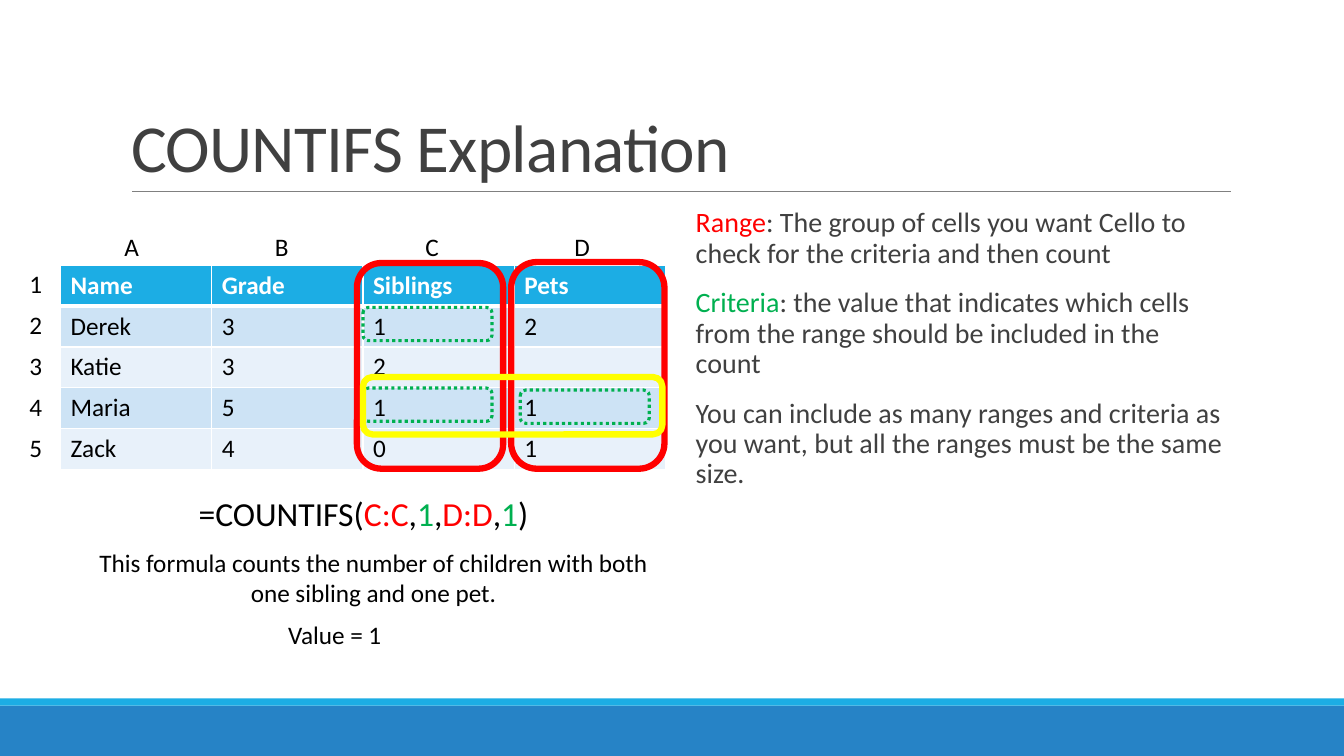
from lxml.etree import SubElement
from pptx import Presentation
from pptx.dml.color import RGBColor
from pptx.enum.dml import MSO_LINE
from pptx.enum.shapes import MSO_CONNECTOR, MSO_SHAPE as SHAPE
from pptx.enum.text import MSO_ANCHOR as ANCHOR, MSO_AUTO_SIZE as AUTO, PP_ALIGN as ALIGN
from pptx.oxml.ns import qn
from pptx.util import Pt

PX = 9144  # 100 px to the inch
FONT = "Calibri"
BLACK = RGBColor(0x00, 0x00, 0x00)
WHITE = RGBColor(0xFF, 0xFF, 0xFF)
DARK = RGBColor(0x40, 0x40, 0x40)
GREY = RGBColor(0x80, 0x80, 0x80)
RED = RGBColor(0xFF, 0x00, 0x00)
GREEN = RGBColor(0x00, 0xB0, 0x50)
YELLOW = RGBColor(0xFF, 0xFF, 0x00)
CYAN = RGBColor(0x1C, 0xAD, 0xE4)
BLUE = RGBColor(0x26, 0x83, 0xC6)
BANDS = [RGBColor(0xCD, 0xE3, 0xF5), RGBColor(0xE8, 0xF1, 0xFA)]

CHILDREN = [
    ["Name", "Grade", "Siblings", "Pets"],
    ["Derek", "3", "1", "2"],
    ["Katie", "3", "2", ""],
    ["Maria", "5", "1", "1"],
    ["Zack", "4", "0", "1"],
]
FORMULA = [("=COUNTIFS(", BLACK), ("C:C", RED), (",", BLACK), ("1", GREEN),
           (",", BLACK), ("D:D", RED), (",", BLACK), ("1", GREEN), (")", BLACK)]
NOTES = [
    [("Range", RED),
     (": The group of cells you want Cello to check for the criteria and then count", DARK)],
    [("Criteria", GREEN),
     (": the value that indicates which cells from the range should be included in the count", DARK)],
    [("You can include as many ranges and criteria as you want, "
      "but all the ranges must be the same size.", DARK)],
]


def emu(*lengths):
    return [length * PX for length in lengths]


def set_format(target, values):
    for name, value in values.items():
        setattr(target, name, value)


def write(paragraph, runs, size, bold=False, **layout):
    set_format(paragraph, layout)
    for text, color in runs:
        run = paragraph.add_run()
        run.text = text
        set_format(run.font, {"name": FONT, "size": Pt(size), "bold": bold})
        run.font.color.rgb = color


def place(shape, box):
    set_format(shape, dict(zip(("left", "top", "width", "height"), emu(*box))))


def add_text(slide, box, runs, size, align=ALIGN.CENTER, wrap=True):
    frame = slide.shapes.add_textbox(*emu(*box)).text_frame
    set_format(frame, {"word_wrap": wrap, "auto_size": AUTO.SHAPE_TO_FIT_TEXT})
    write(frame.paragraphs[0], runs, size, alignment=align)


def add_bar(slide, box, color):
    bar = slide.shapes.add_shape(SHAPE.RECTANGLE, *emu(*box))
    bar.shadow.inherit = False
    bar.fill.solid()
    bar.fill.fore_color.rgb = color
    bar.line.fill.background()


def add_frame(slide, box, color, width, dash=None):
    frame = slide.shapes.add_shape(SHAPE.ROUNDED_RECTANGLE, *emu(*box))
    frame.shadow.inherit = False
    frame.fill.background()
    frame.line.color.rgb = color
    set_format(frame.line, {"width": Pt(width), "dash_style": dash})


def add_grid(slide, box, rows):
    left, top, width, height = box
    table = slide.shapes.add_table(len(rows), len(rows[0]), *emu(*box)).table
    set_format(table, {"first_row": False, "horz_banding": False})
    for row in table.rows:
        row.height = height * PX // len(rows)
    return table


def set_borders(cell, top, bottom):
    properties = cell._tc.get_or_add_tcPr()
    for index, (side, width) in enumerate(zip("LRTB", (1, 1, top, bottom))):
        line = SubElement(properties, qn(f"a:ln{side}"), w=str(Pt(width)))
        fill = SubElement(line, qn("a:solidFill"))
        SubElement(fill, qn("a:srgbClr"), val=str(WHITE))
        properties.insert(index, line)


def build_backdrop(slide, width, height):
    add_bar(slide, (0, height - 50, width, 50), BLUE)
    add_bar(slide, (0, height - 57, width, 7), CYAN)
    rule = slide.shapes.add_connector(MSO_CONNECTOR.STRAIGHT, *emu(131, 190, 1221, 190))
    rule.line.color.rgb = GREY
    rule.line.width = Pt(0.5)
    SubElement(rule._element.spPr, qn("a:effectLst"))


def build_title(slide, box, text):
    title = slide.shapes.title
    place(title, box)
    frame = title.text_frame
    set_format(frame, {"vertical_anchor": ANCHOR.BOTTOM, "auto_size": AUTO.NONE,
                       "word_wrap": True})
    write(frame.paragraphs[0], [(text, DARK)], 48, alignment=ALIGN.LEFT, line_spacing=0.85)
    frame.paragraphs[0].runs[0].font._element.set("spc", "-50")


def build_notes(slide, box):
    body = slide.placeholders[1]
    place(body, box)
    frame = body.text_frame
    set_format(frame, {"margin_left": 0, "margin_right": 0, "auto_size": AUTO.NONE,
                       "word_wrap": True})
    for index, runs in enumerate(NOTES):
        paragraph = frame.add_paragraph() if index else frame.paragraphs[0]
        write(paragraph, runs, 20, line_spacing=0.9, space_before=Pt(12), space_after=Pt(2))
        properties = paragraph._p.get_or_add_pPr()
        properties.set("marL", str(10 * PX))
        properties.set("indent", str(-10 * PX))
        SubElement(properties, qn("a:buChar"), char=" ")


def build_labels(slide, box, rows, align):
    table = add_grid(slide, box, rows)
    for cell, text in zip(table.iter_cells(), (text for row in rows for text in row)):
        cell.fill.background()
        write(cell.text_frame.paragraphs[0], [(text, BLACK)], 18, alignment=align)


def build_children(slide, box):
    table = add_grid(slide, box, CHILDREN)
    table.first_row = True
    for row, texts in enumerate(CHILDREN):
        header = row == 0
        for column, text in enumerate(texts):
            cell = table.cell(row, column)
            cell.fill.solid()
            cell.fill.fore_color.rgb = CYAN if header else BANDS[(row - 1) % 2]
            set_borders(cell, 3 if row == 1 else 1, 3 if header else 1)
            paragraph = cell.text_frame.paragraphs[0]
            if text:
                write(paragraph, [(text, WHITE if header else BLACK)], 18, header)
            else:
                paragraph.font.size = Pt(18)


def build_spreadsheet(slide, box):
    left, top, width, height = box
    build_labels(slide, (left - 4, top - 37, 596, 40), [list("ABCD")], ALIGN.CENTER)
    build_labels(slide, (left - 41, top - 1, 68, 204), list("12345"), ALIGN.LEFT)
    build_children(slide, box)


def build_marks(slide, left, top):
    # Ranges, matching criteria, then the row that meets both
    for x, y, width, height in [(447, -3, 152, 205), (294, -2, 145, 204)]:
        add_frame(slide, (left + x, top + y, width, height), RED, 4.5)
    for x, y in [(300, 42), (300, 122), (456, 124)]:
        add_frame(slide, (left + x, top + y, 128, 33), GREEN, 2.25, MSO_LINE.ROUND_DOT)
    add_frame(slide, (left + 300, top + 111, 297, 57), YELLOW, 4.5)


def build_formula(slide, left, top):
    add_text(slide, (left, top, 599, 51), FORMULA, 24)
    add_text(slide, (left + 7, top + 54, 605, 71),
             [("This formula counts the number of children with both "
               "one sibling and one pet.", BLACK)], 18)
    add_text(slide, (left + 215, top + 125, 114, 40),
             [("Value = 1", BLACK)], 18, ALIGN.LEFT, False)


def main():
    presentation = Presentation()
    width, height = 1333, 750
    set_format(presentation, dict(zip(("slide_width", "slide_height"), emu(width, height))))
    slide = presentation.slides.add_slide(presentation.slide_layouts[1])
    build_backdrop(slide, width, height)
    build_title(slide, (120, 31, 1100, 159), "COUNTIFS Explanation")
    build_notes(slide, (680, 202, 540, 496))
    build_spreadsheet(slide, (60, 263, 600, 203))
    build_formula(slide, 61, 484)
    build_marks(slide, 60, 263)
    presentation.save("out.pptx")


if __name__ == "__main__":
    main()
